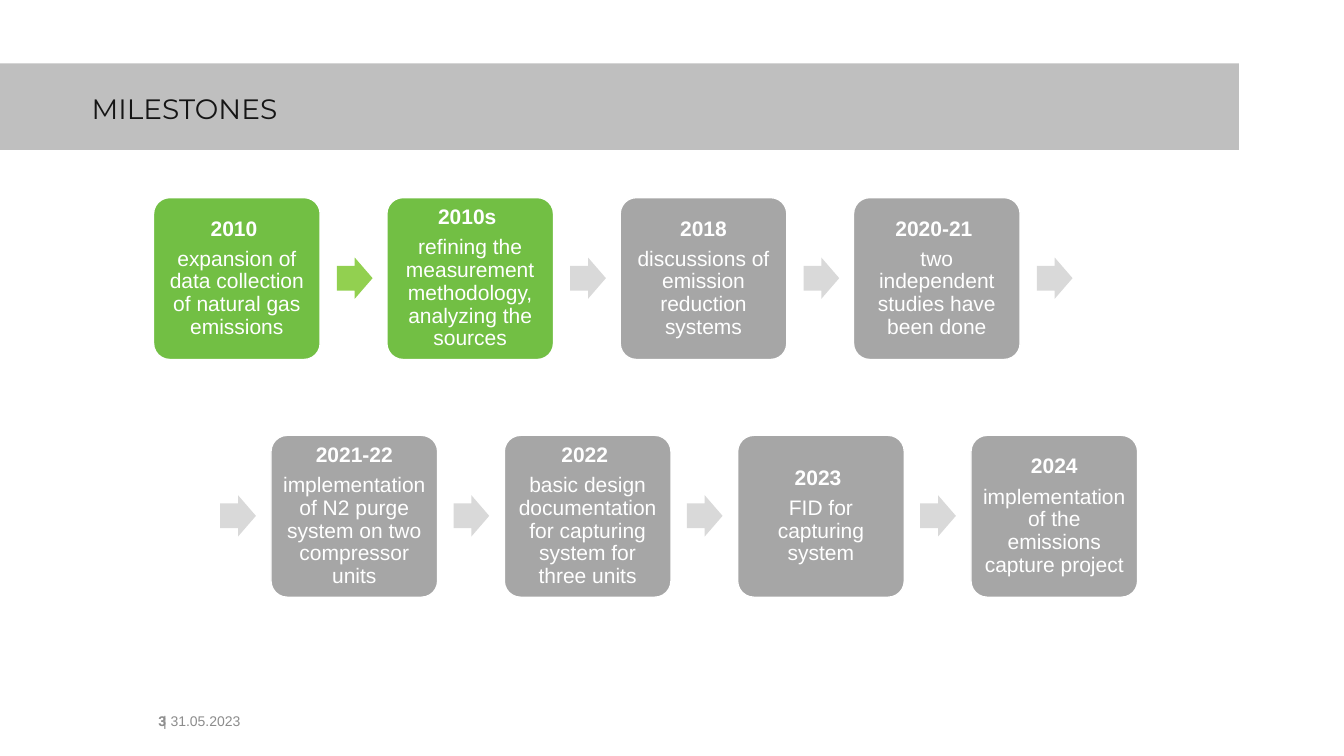
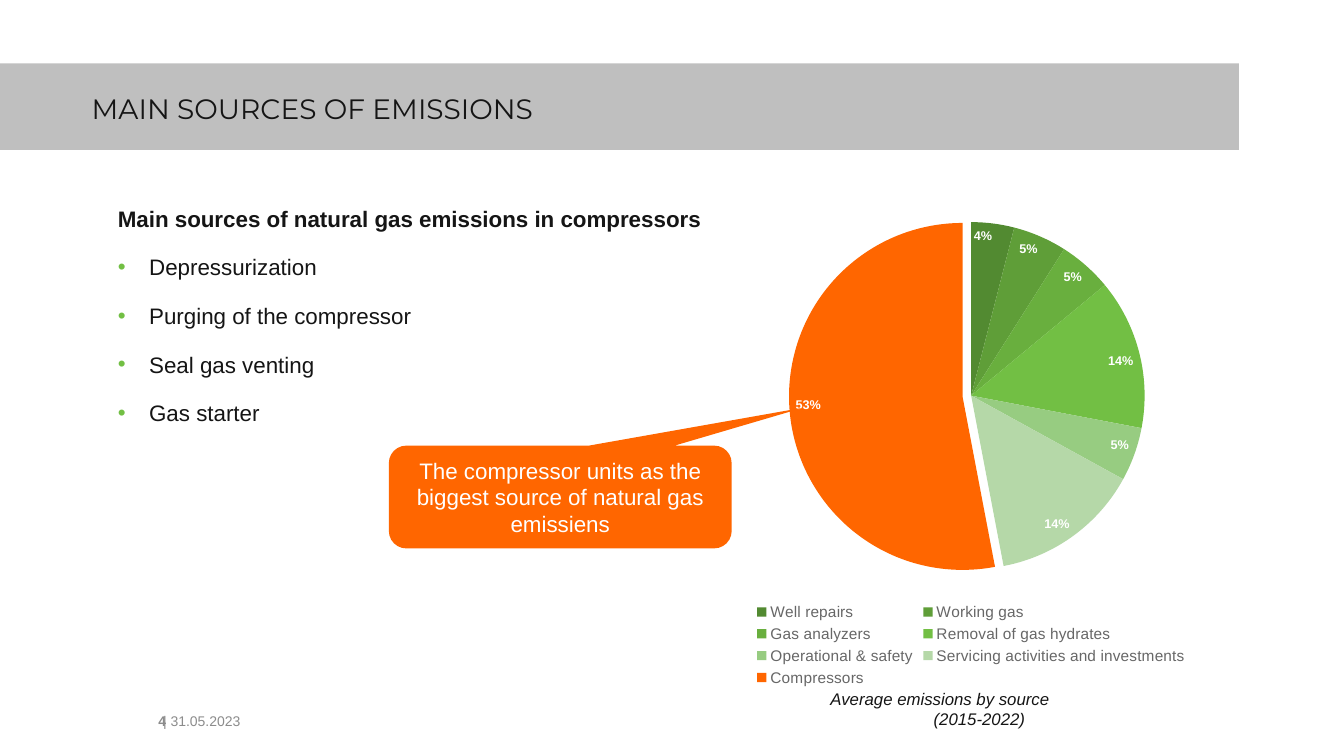
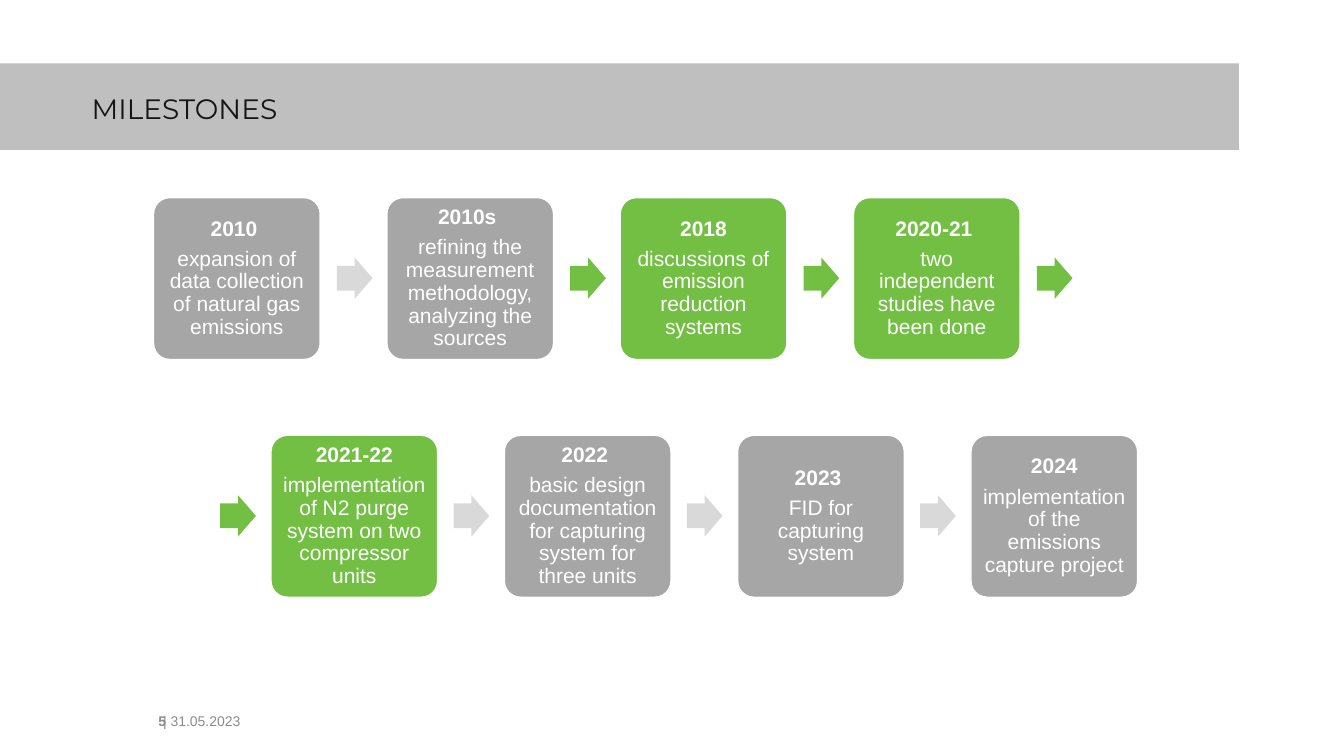
from lxml.etree import SubElement
from pptx import Presentation
from pptx.chart.data import CategoryChartData
from pptx.dml.color import RGBColor
from pptx.enum.chart import XL_CHART_TYPE as ChartType
from pptx.enum.chart import XL_LABEL_POSITION as LabelPosition
from pptx.enum.chart import XL_LEGEND_POSITION as LegendPosition
from pptx.enum.shapes import MSO_SHAPE as Shape
from pptx.enum.text import MSO_ANCHOR as Anchor
from pptx.enum.text import MSO_AUTO_SIZE as AutoSize
from pptx.enum.text import PP_ALIGN as Align
from pptx.oxml.ns import qn
from pptx.util import Cm, Pt

COLORS = {
    "ink": "151515", "white": "FFFFFF", "band": "BFBFBF", "footer": "8C8C8C",
    "legend": "676767", "green": "72BF44", "lime": "92D050",
    "gray": "A6A6A6", "pale": "D9D9D9", "orange": "FF6600",
}
DATE = "31.05.2023"

MILESTONES = [
    ("2010 ", "expansion of data collection of natural gas emissions"),
    ("2010s ", "refining the measurement methodology, analyzing the sources"),
    ("2018", "discussions of emission reduction systems"),
    ("2020-21 ", "two independent studies have been done"),
    ("2021-22", "implementation of N2 purge system on two compressor units"),
    ("2022 ", "basic design documentation for capturing system for three units"),
    ("2023 ", "FID for capturing system"),
    ("2024", "implementation of the emissions capture project"),
]
# Source, share in percent, slice colour
SOURCES = [
    ("Well repairs", 4, "528A31"),
    ("Working gas", 5, "5F9E38"),
    ("Gas analyzers", 5, "69AF3E"),
    ("Removal of gas hydrates", 14, COLORS["green"]),
    ("Operational & safety", 5, "97CC81"),
    ("Servicing activities and investments", 14, "B5D8A8"),
    ("Compressors", 53, COLORS["orange"]),
]


def rgb(color):
    return RGBColor.from_string(COLORS.get(color, color))


def set_font(font, size, color="ink", bold=False, italic=False, name="Arial"):
    font.name, font.size = name, Pt(size)
    font.bold, font.italic = bold, italic
    font.color.rgb = rgb(color)


def write(frame, text, align=Align.LEFT, line=1.0, before=0, after=0,
          indent=0, bullet=None, **font):
    """Add one formatted paragraph to a text frame."""
    para = frame.add_paragraph() if frame.text else frame.paragraphs[0]
    props = para._p.get_or_add_pPr()
    if indent:
        props.set("marL", str(Cm(indent)))
    if bullet:
        props.set("indent", str(-Cm(indent)))
        color = SubElement(props, qn("a:buClr"))
        SubElement(color, qn("a:srgbClr")).set("val", COLORS[bullet])
        SubElement(props, qn("a:buFont")).set("typeface", "Arial")
        SubElement(props, qn("a:buChar")).set("char", "•")
    para.alignment, para.line_spacing = align, line
    para.space_before, para.space_after = Pt(before), Pt(after)
    span = para.add_run()
    span.text = text
    set_font(span.font, **font)


class Deck:
    """Holds the shared style and the page being built."""

    def __init__(self):
        self.file = Presentation()
        self.file.slide_width, self.file.slide_height = Cm(33.87), Cm(19.05)
        self.page = None

    def frame(self, box, anchor=Anchor.TOP, insets=(0.25, 0.13, 0.25, 0.13)):
        frame = box.text_frame
        frame.word_wrap, frame.auto_size = True, AutoSize.NONE
        frame.vertical_anchor = anchor
        (frame.margin_left, frame.margin_top,
         frame.margin_right, frame.margin_bottom) = map(Cm, insets)
        return frame

    def start_page(self, title, number):
        self.page = self.file.slides.add_slide(self.file.slide_layouts[5])
        # Title band
        band = self.page.shapes.title
        band.left, band.top, band.width, band.height = map(
            Cm, (0, 1.6, 31.22, 2.18))
        band.fill.solid()
        band.fill.fore_color.rgb = rgb("band")
        write(self.frame(band, insets=(2.31, 0.79, 0.25, 0.61)), title,
              line=0.9, after=6, size=20, name="Montserrat")
        # Footer
        write(self.text(3.86, 17.65, 7.62, 1.02, Anchor.MIDDLE),
              f"| {DATE}", size=10, color="footer")
        write(self.text(2.74, 17.65, 1.7, 1.02, Anchor.MIDDLE), str(number),
              align=Align.RIGHT, size=10, color="footer", bold=True)

    def text(self, left, top, width, height, anchor=Anchor.TOP):
        box = self.page.shapes.add_textbox(*map(Cm, (left, top, width, height)))
        return self.frame(box, anchor)

    def shape(self, kind, left, top, width, height, fill, adjust, line=None):
        box = self.page.shapes.add_shape(
            kind, *map(Cm, (left, top, width, height)))
        box.shadow.inherit = False
        for index, value in enumerate(adjust):
            box.adjustments[index] = value
        box.fill.solid()
        box.fill.fore_color.rgb = rgb(fill)
        if line:
            box.line.color.rgb = rgb(line)
            box.line.width = Pt(1)
        else:
            box.line.fill.background()
        return box

    def step(self, left, top, year, label, fill):
        box = self.shape(Shape.ROUNDED_RECTANGLE, left, top, 4.2, 4.08,
                         fill, [0.1], line="white")
        # The rounded corners already inset the text a little
        frame = self.frame(box, Anchor.MIDDLE, (0.15,) * 4)
        for text, bold in ((year, True), (label, False)):
            write(frame, text, align=Align.CENTER, line=0.9, after=5.25,
                  size=15, color="white", bold=bold)

    def arrow(self, left, top, fill):
        self.shape(Shape.RIGHT_ARROW, left, top, 0.9, 1.04, fill, [0.6, 0.5])

    def pie(self, left, top, width, height, slices):
        names, values, colors = zip(*slices)
        data = CategoryChartData()
        data.categories = names
        data.add_series("Series 1", values)
        chart = self.page.shapes.add_chart(
            ChartType.PIE, *map(Cm, (left, top, width, height)), data).chart
        set_font(chart.font, 10)
        chart.has_title = False
        chart.has_legend = True
        chart.legend.position = LegendPosition.BOTTOM
        chart.legend.include_in_layout = False
        set_font(chart.legend.font, 11, "legend")
        plot = chart.plots[0]
        plot.vary_by_categories = True
        plot.has_data_labels = True
        labels = plot.data_labels
        labels.show_percentage, labels.show_value = True, False
        labels.number_format, labels.number_format_is_linked = "0%", False
        labels.position = LabelPosition.INSIDE_END
        set_font(labels.font, 9, "white", bold=True)
        series = plot.series[0]
        for index, color in enumerate(colors):
            fill = series.points[index].format.fill
            fill.solid()
            fill.fore_color.rgb = rgb(color)
        # Pull the last slice out
        last = series._element.findall(qn("c:dPt"))[-1]
        explosion = SubElement(last, qn("c:explosion"))
        explosion.set("val", "5")
        last.find(qn("c:spPr")).addprevious(explosion)


def milestones_page(deck, number, active, arrows):
    """Two rows of four steps; arrows follow them above, lead them below."""
    deck.start_page("MILESTONES", number)
    pitch = 5.88
    for index, (year, label) in enumerate(MILESTONES):
        row, column = divmod(index, 4)
        left = (3.87, 6.83)[row] + column * pitch
        top = (4.98, 10.97)[row]
        gap = (4.62, -1.28)[row]
        fill = "green" if index in active else "gray"
        deck.step(left, top, year, label, fill)
        deck.arrow(left + gap, top + 1.51, arrows.get(index, "pale"))


def sources_page(deck, number):
    deck.start_page("MAIN SOURCES OF EMISSIONS", number)
    # Bullet list
    body = deck.text(2.72, 5.03, 28.5, 5.77)
    write(body, "Main sources of natural gas emissions in compressors",
          size=16, bold=True)
    for source in ("Depressurization", "Purging of the compressor",
                   "Seal gas venting", "Gas starter"):
        write(body, source, line=1.5, before=6, indent=0.79, bullet="green",
              size=16)
    # Chart with caption
    deck.pie(17.2, 5.03, 14.55, 12.37, SOURCES)
    caption = deck.text(20.68, 17.22, 7.59, 1.27)
    write(caption, "Average emissions by source", size=12, italic=True)
    write(caption, "(2015-2022)", indent=2.6, size=12, italic=True)
    # Callout
    callout = deck.shape(Shape.ROUNDED_RECTANGULAR_CALLOUT, 9.8, 11.23, 8.64,
                         2.59, "orange", [0.71, -0.87, 0.17])
    write(deck.frame(callout, Anchor.MIDDLE),
          "The compressor units as the biggest source of natural gas emissiens",
          align=Align.CENTER, size=16, color="white")


def main():
    deck = Deck()
    milestones_page(deck, 3, active={0, 1}, arrows={0: "lime"})
    sources_page(deck, 4)
    milestones_page(deck, 5, active={2, 3, 4},
                    arrows=dict.fromkeys(range(1, 5), "green"))
    deck.file.save("out.pptx")


if __name__ == "__main__":
    main()
